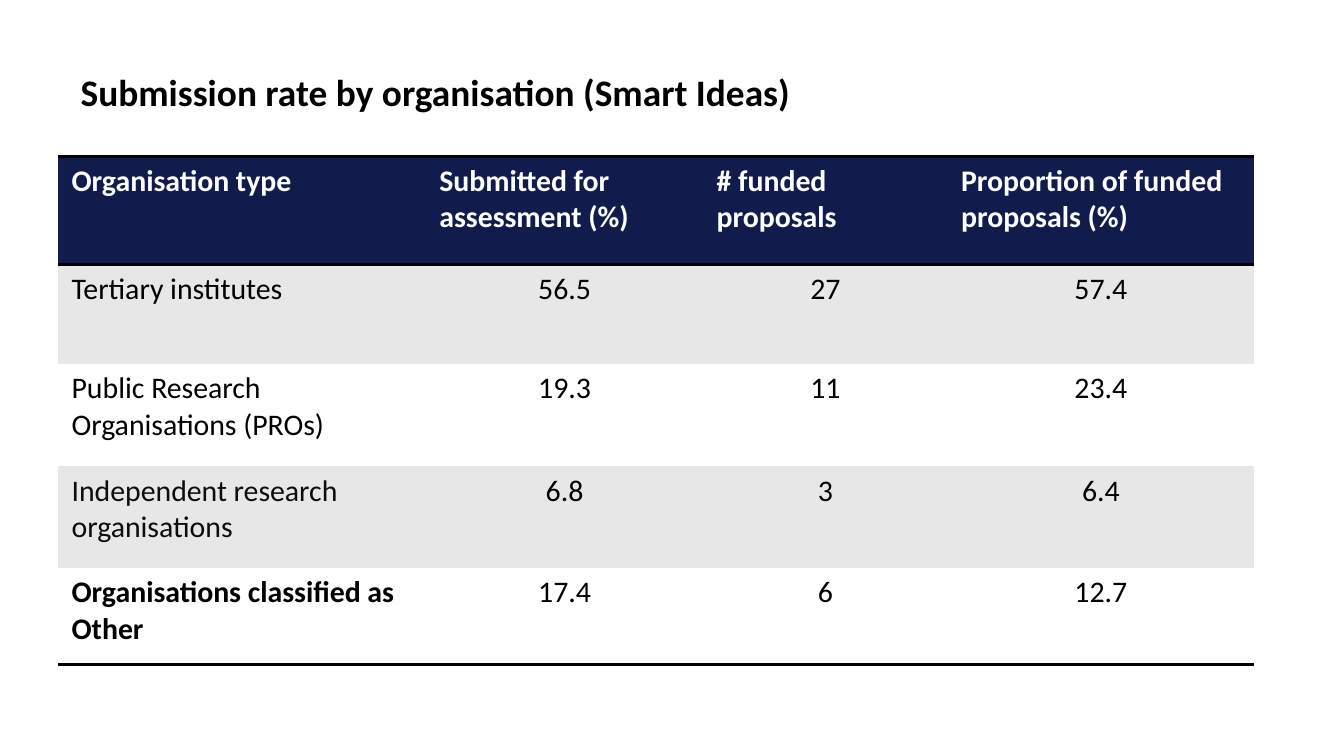
from dataclasses import dataclass

from lxml.etree import SubElement
from pptx import Presentation
from pptx.dml.color import RGBColor
from pptx.enum.text import MSO_ANCHOR, MSO_AUTO_SIZE, PP_ALIGN
from pptx.oxml.ns import qn
from pptx.util import Cm, Pt


@dataclass(frozen=True)
class Theme:
    font: str = "Calibri"
    title_size: int = 20
    table_size: int = 16
    rule_width: int = 2
    black: str = "000000"
    soft_black: str = "0D0D0D"
    white: str = "FFFFFF"
    navy: str = "111C4D"
    grey: str = "E7E7E7"


THEME = Theme()
PLAIN_TABLE_STYLE = "{2D5ABB26-0587-4C30-8999-92F81FD0307C}"
TITLE = "Submission rate by organisation (Smart Ideas)"
TITLE_BOX = (1.27, 0.58, 22.86, 2.39)
TABLE_BOX = (1.1, 2.95, 22.6, 9.6)
COLUMN_WIDTHS = (6.95, 5.24, 4.62, 5.79)
ROW_HEIGHTS = (2.04, 1.88, 1.93, 1.92, 1.83)
ROWS = (
    ("Organisation type", "Submitted for assessment (%)", "# funded proposals",
     "Proportion of funded proposals (%)"),
    ("Tertiary institutes", "56.5", "27", "57.4"),
    ("Public Research Organisations (PROs)", "19.3", "11", "23.4"),
    ("Independent research organisations", "6.8", "3", "6.4"),
    ("Organisations classified as Other", "17.4", "6", "12.7"),
)


def set_attributes(target, values):
    for name, value in values.items():
        setattr(target, name, value)


def format_font(font, size, color, bold):
    set_attributes(font, {"name": THEME.font, "size": Pt(size), "bold": bold})
    font.color.rgb = RGBColor.from_string(color)


def add_rule(cell, side):
    properties = cell._tc.get_or_add_tcPr()
    line = SubElement(properties, qn(f"a:ln{side}"), w=str(Pt(THEME.rule_width)))
    fill = SubElement(line, qn("a:solidFill"))
    SubElement(fill, qn("a:srgbClr"), val=THEME.black)


def place_title(slide, box):
    shape = slide.shapes.title
    left, top, width, height = map(Cm, box)
    set_attributes(shape, {"left": left, "top": top, "width": width, "height": height})
    set_attributes(shape.text_frame, {
        "text": TITLE, "word_wrap": True, "auto_size": MSO_AUTO_SIZE.NONE,
        "vertical_anchor": MSO_ANCHOR.MIDDLE,
    })
    paragraph = shape.text_frame.paragraphs[0]
    set_attributes(paragraph, {"alignment": PP_ALIGN.LEFT, "line_spacing": 0.9})
    format_font(paragraph.runs[0].font, THEME.title_size, THEME.black, True)


def format_cell(cell, text, row, column):
    header = row == 0
    last = row == len(ROWS) - 1
    label = column == 0
    cell.text = text
    paragraph = cell.text_frame.paragraphs[0]
    paragraph.alignment = PP_ALIGN.LEFT if header or label else PP_ALIGN.CENTER
    color = THEME.white if header else THEME.black
    if label and row == 3:
        color = THEME.soft_black
    format_font(paragraph.runs[0].font, THEME.table_size, color,
                header or (last and label))
    if header:
        add_rule(cell, "T")
    if header or last:
        add_rule(cell, "B")
    cell.fill.solid()
    band = THEME.grey if row % 2 else THEME.white
    cell.fill.fore_color.rgb = RGBColor.from_string(THEME.navy if header else band)


def place_table(slide, box):
    frame = slide.shapes.add_table(len(ROWS), len(COLUMN_WIDTHS), *map(Cm, box))
    table = frame.table
    table._tbl.tblPr.find(qn("a:tableStyleId")).text = PLAIN_TABLE_STYLE
    for column, width in zip(table.columns, COLUMN_WIDTHS):
        column.width = Cm(width)
    for row, height in zip(table.rows, ROW_HEIGHTS):
        row.height = Cm(height)
    for row, texts in enumerate(ROWS):
        for column, text in enumerate(texts):
            format_cell(table.cell(row, column), text, row, column)


def main():
    presentation = Presentation()
    set_attributes(presentation, {"slide_width": Cm(25.4), "slide_height": Cm(14.28)})
    slide = presentation.slides.add_slide(presentation.slide_layouts[5])
    place_title(slide, TITLE_BOX)
    place_table(slide, TABLE_BOX)
    presentation.save("out.pptx")


if __name__ == "__main__":
    main()
